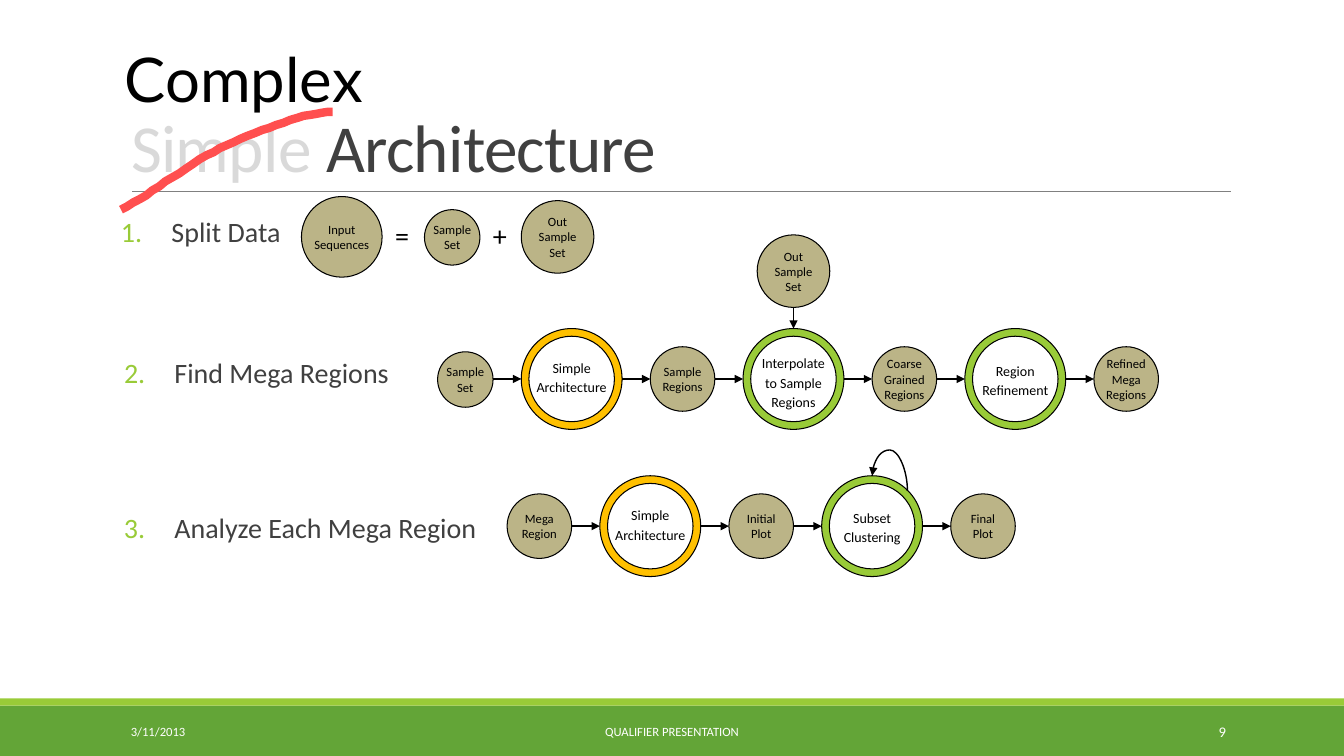
from itertools import pairwise

from lxml.etree import SubElement
from pptx import Presentation
from pptx.dml.color import RGBColor
from pptx.enum.shapes import MSO_CONNECTOR, MSO_SHAPE
from pptx.enum.text import MSO_ANCHOR, MSO_AUTO_SIZE, PP_ALIGN
from pptx.oxml.ns import qn
from pptx.util import Pt

PX = 9144  # 100 px to the inch
BLACK = RGBColor(0, 0, 0)
WHITE = RGBColor(255, 255, 255)
DARK = RGBColor(0x40, 0x40, 0x40)
PALE = RGBColor(0xD9, 0xD9, 0xD9)
GREY = RGBColor(0x80, 0x80, 0x80)
GREEN = RGBColor(0x63, 0xA5, 0x37)
LIME = RGBColor(0x99, 0xCB, 0x38)
AMBER = RGBColor(0xFF, 0xC0, 0x00)
KHAKI = RGBColor(0xBB, 0xB4, 0x87)
RED = RGBColor(0xFF, 0x4F, 0x4F)

RING = 100
GAP = 28


class Deck:
    font = "Calibri"

    def __init__(self, width, height):
        self.presentation = Presentation()
        self.presentation.slide_width = width * PX
        self.presentation.slide_height = height * PX
        self.slide = self.presentation.slides.add_slide(self.presentation.slide_layouts[1])
        self.shapes = self.slide.shapes

    def place(self, shape, left, top, width, height):
        shape.left, shape.top = left * PX, top * PX
        shape.width, shape.height = width * PX, height * PX

    def frame(self, shape, anchor, insets):
        frame = shape.text_frame
        frame.word_wrap = True
        frame.auto_size = MSO_AUTO_SIZE.NONE
        frame.vertical_anchor = anchor
        (frame.margin_left, frame.margin_top,
         frame.margin_right, frame.margin_bottom) = [inset * PX for inset in insets]
        return frame.paragraphs[0]

    def style(self, paragraph, size, color, align=PP_ALIGN.LEFT, spacing=1.0, font=None):
        paragraph.alignment = align
        paragraph.line_spacing = spacing
        paragraph.font.name = font or self.font
        paragraph.font.size = Pt(size)
        paragraph.font.color.rgb = color

    def text(self, words, box, size, color, anchor=MSO_ANCHOR.TOP, **style):
        holder = self.shapes.add_textbox(*[side * PX for side in box])
        paragraph = self.frame(holder, anchor, (10, 5, 10, 5))
        paragraph.text = words
        self.style(paragraph, size, color, **style)

    def title(self, parts, box, size):
        holder = self.shapes.title
        self.place(holder, *box)
        paragraph = self.frame(holder, MSO_ANCHOR.BOTTOM, (10, 5, 10, 5))
        self.style(paragraph, size, DARK, spacing=0.85)
        for words, color in parts:
            run = paragraph.add_run()
            run.text = words
            run.font.color.rgb = color
            run._r.get_or_add_rPr().set("spc", "-50")

    def step(self, number, words, box):
        if number == 1:
            holder = self.slide.placeholders[1]
            self.place(holder, *box)
        else:
            holder = self.shapes.add_textbox(*[side * PX for side in box])
        paragraph = self.frame(holder, MSO_ANCHOR.TOP, (0, 5, 0, 5))
        paragraph.text = words
        properties = paragraph._p.get_or_add_pPr()
        properties.set("marL", str(50 * PX))
        properties.set("indent", str(-50 * PX))
        bullet_color = SubElement(properties, qn("a:buClr"))
        SubElement(bullet_color, qn("a:srgbClr"), val=str(LIME))
        SubElement(properties, qn("a:buFont"), typeface="+mj-lt")
        SubElement(properties, qn("a:buAutoNum"), type="arabicPeriod", startAt=str(number))
        paragraph.space_before, paragraph.space_after = Pt(12), Pt(2)
        self.style(paragraph, 20, DARK, spacing=0.9)

    def shape(self, kind, box, fill, outlined=False):
        shape = self.shapes.add_shape(kind, *[side * PX for side in box])
        shape.shadow.inherit = False
        shape.fill.solid()
        shape.fill.fore_color.rgb = fill
        if outlined:
            shape.line.color.rgb = BLACK
            shape.line.width = Pt(0.75)
        else:
            shape.line.fill.background()
        return shape

    def disc(self, words, center, middle, size):
        box = (center - size // 2, middle - size // 2, size, size)
        disc = self.shape(MSO_SHAPE.OVAL, box, KHAKI, True)
        paragraph = self.frame(disc, MSO_ANCHOR.MIDDLE, (0, 0, 0, 0))
        paragraph.text = words
        self.style(paragraph, 9, BLACK, PP_ALIGN.CENTER)

    def ring(self, words, center, middle, color, insets):
        box = (center - RING // 2, middle - RING // 2, RING, RING)
        ring = self.shape(MSO_SHAPE.DONUT, box, color, True)
        ring.adjustments[0] = 0.076
        paragraph = self.frame(ring, MSO_ANCHOR.MIDDLE, insets)
        paragraph.text = words
        self.style(paragraph, 10, BLACK, PP_ALIGN.CENTER, 1.15)

    def line(self, start, end, color=BLACK, weight=1, arrow=True, kind=MSO_CONNECTOR.STRAIGHT):
        line = self.shapes.add_connector(kind, *[value * PX for value in (*start, *end)])
        line.line.color.rgb = color
        line.line.width = Pt(weight)
        if arrow:
            SubElement(line.line._get_or_add_ln(), qn("a:tailEnd"), type="triangle")
        SubElement(line._element.spPr, qn("a:effectLst"))
        return line

    def loop(self, start, end, bulge):
        # A curved connector turned a quarter, leaving and arriving from above
        loop = self.line(start, end, kind=MSO_CONNECTOR.CURVE)
        properties = loop._element.spPr
        properties.xfrm.set("rot", "16200000")
        properties.xfrm.set("flipV", "1")
        guides = properties.find(qn("a:prstGeom")).find(qn("a:avLst"))
        SubElement(guides, qn("a:gd"), name="adj1", fmla=f"val {bulge}")

    def stroke(self, curves, color, weight, steps=16):
        points = []
        for a, b, c, d in curves:
            for step in range(steps + 1):
                t = step / steps
                u = 1 - t
                points.append([u**3 * p + 3 * u * u * t * q + 3 * u * t * t * r + t**3 * s
                               for p, q, r, s in zip(a, b, c, d)])
        builder = self.shapes.build_freeform(*points[0], scale=PX)
        builder.add_line_segments(points[1:], close=False)
        stroke = builder.convert_to_shape()
        stroke.shadow.inherit = False
        stroke.fill.background()
        stroke.line.color.rgb = color
        stroke.line.width = Pt(weight)

    def chain(self, left, middle, nodes):
        spans = []
        for words, size, color, insets in nodes:
            center = left + size // 2
            if color == KHAKI:
                self.disc(words, center, middle, size)
            else:
                self.ring(words, center, middle, color, insets)
            spans.append((left, left + size))
            left += size + GAP
        for (_, start), (end, _) in pairwise(spans):
            self.line((start, middle), (end, middle))


def data(words, size=64):
    return words, size, KHAKI, None


def process(words, color=LIME, top=0, bottom=0):
    return words, RING, color, (0, top, 0, bottom)


def main():
    deck = Deck(1333, 750)

    # Footer bands, divider and footer text
    deck.shape(MSO_SHAPE.RECTANGLE, (0, 700, 1333, 50), GREEN)
    deck.shape(MSO_SHAPE.RECTANGLE, (0, 693, 1333, 7), LIME)
    deck.line((131, 190), (1221, 190), GREY, 0.5, arrow=False)
    for words, left, width, size, align in (
            ("3/11/2013", 120, 270, 9, PP_ALIGN.LEFT),
            ("QUALIFIER PRESENTATION", 403, 527, 9, PP_ALIGN.CENTER),
            ("9", 1083, 143, 10.5, PP_ALIGN.RIGHT)):
        deck.text(words, (left, 706, width, 40), size, WHITE, MSO_ANCHOR.MIDDLE, align=align)

    # Title with its first word struck out
    deck.title((("Simple", PALE), (" Architecture", DARK)), (120, 31, 1100, 159), 48)
    deck.text("Complex", (114, 36, 354, 84), 44, BLACK, font="Lato")
    deck.stroke((((120, 208), (151, 192), (190, 160), (225, 144)),
                 ((225, 144), (260, 128), (304, 111), (330, 111))), RED, 6)

    # Numbered steps
    deck.step(1, "Split Data", (120, 212, 176, 82))
    deck.step(2, "Find Mega Regions", (123, 352, 302, 82))
    deck.step(3, "Analyze Each Mega Region", (123, 505, 383, 82))

    # Step 1: the split as an equation
    for words, center, size in (("Input Sequences", 339, 80), ("Sample Set", 448, 55),
                                ("Out Sample Set", 553, 72)):
        deck.disc(words, center, 235, size)
    for sign, left in (("=", 382), ("+", 479)):
        deck.text(sign, (left, 212, 40, 44), 20, BLACK)

    # Step 2: regions, with the out sample fed in from above
    simple = process("Simple Architecture", AMBER, bottom=5)
    deck.chain(434, 376, (
        data("Sample Set", 55), simple, data("Sample Regions"),
        process("Interpolate to Sample Regions", top=5), data("Coarse Grained Regions"),
        process("Region Refinement"), data("Refined Mega Regions")))
    deck.disc("Out Sample Set", 787, 269, 72)
    deck.line((787, 305), (787, 326))

    # Step 3: analysis, with clustering repeated
    deck.chain(503, 522, (
        data("Mega Region"), simple, data("Initial Plot"),
        process("Subset Clustering"), data("Final Plot")))
    deck.loop((875, 462), (890, 497), 270700)

    deck.presentation.save("out.pptx")


if __name__ == "__main__":
    main()
